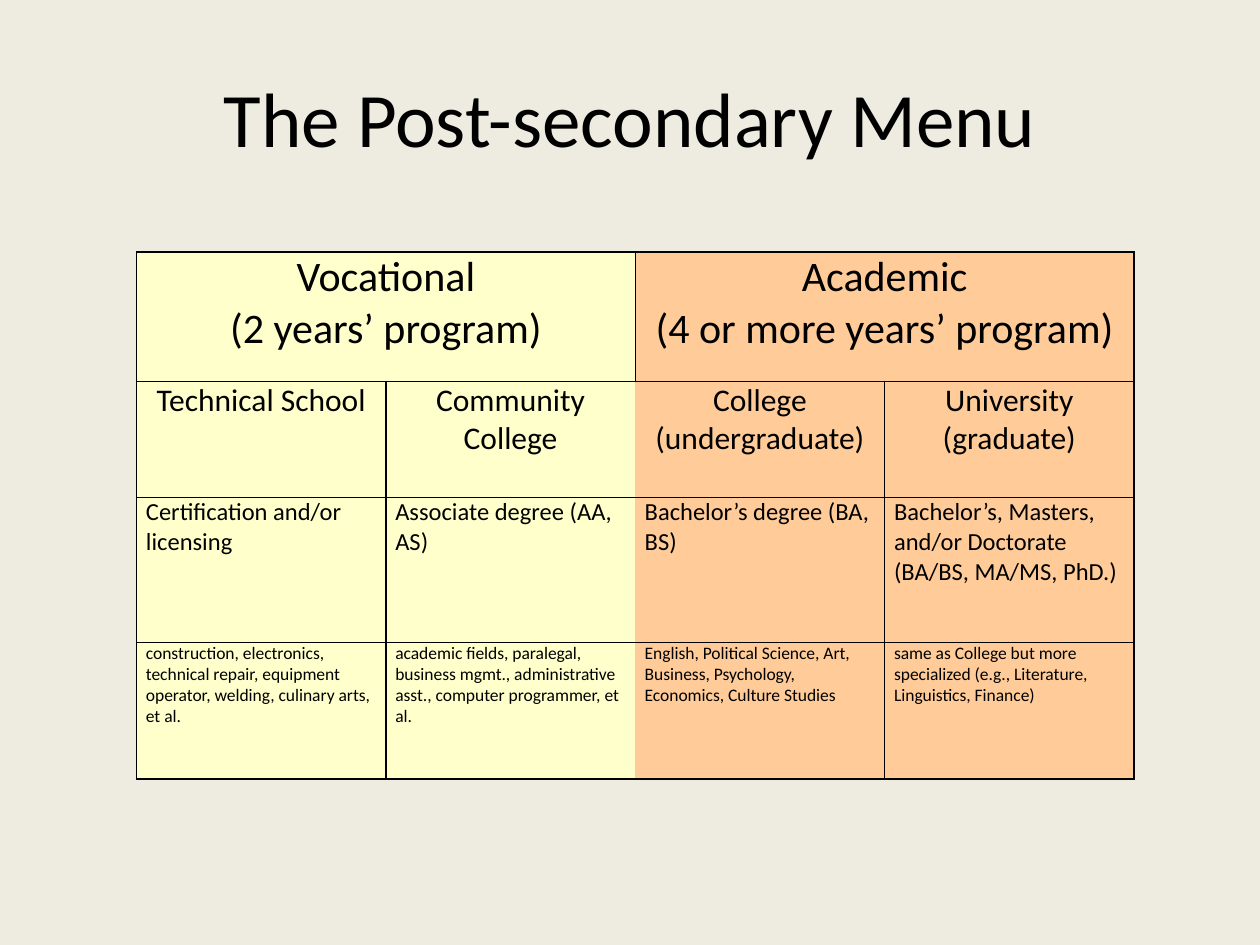
from lxml.etree import SubElement
from pptx import Presentation
from pptx.dml.color import RGBColor
from pptx.enum.text import MSO_ANCHOR, PP_ALIGN
from pptx.oxml import parse_xml
from pptx.oxml.ns import nsdecls, qn
from pptx.util import Pt

BACKGROUND = RGBColor(0xEE, 0xEC, 0xE1)
INK = RGBColor(0, 0, 0)
VOCATIONAL = RGBColor(0xFF, 0xFF, 0xCC)
ACADEMIC = RGBColor(0xFF, 0xCC, 0x99)

PROGRAMS = [
    ["Vocational\n(2 years’ program)", "", "Academic\n(4 or more years’ program)", ""],
    ["Technical School", "Community College", "College\n(undergraduate)",
     "University\n(graduate)"],
    ["Certification and/or licensing", "Associate degree (AA, AS)",
     "Bachelor’s degree (BA, BS)",
     "Bachelor’s, Masters, and/or Doctorate\n(BA/BS, MA/MS, PhD.)"],
    ["construction, electronics, technical repair, equipment operator, welding, "
     "culinary arts, et al.",
     "academic fields, paralegal, business mgmt., administrative asst., "
     "computer programmer, et al.",
     "English, Political Science, Art, Business, Psychology, Economics, Culture Studies",
     "same as College but more specialized (e.g., Literature, Linguistics, Finance)"],
]
ROW_HEIGHTS = [74, 66.3, 82.9, 77.9]
ROW_SIZES = [24, 18, 14, 10]


def write(frame, text, size, align=PP_ALIGN.LEFT, color=INK, font="Calibri"):
    """Fill a text frame with one paragraph per line of text."""
    frame.word_wrap = True
    frame.text = text
    for paragraph in frame.paragraphs:
        paragraph.alignment = align
        paragraph.font.size = Pt(size)
        paragraph.font.name = font
        paragraph.font.color.rgb = color


def draw_borders(cell, open_sides, width=1):
    """Rule the four sides of a cell, leaving the open sides bare."""
    properties = cell._tc.get_or_add_tcPr()
    for position, side in enumerate("LRTB"):
        border = parse_xml(f'<a:ln{side} {nsdecls("a")} w="{Pt(width)}"/>')
        if side in open_sides:
            SubElement(border, qn("a:noFill"))
        else:
            ink = SubElement(border, qn("a:solidFill"))
            SubElement(ink, qn("a:srgbClr"), val=str(INK))
        properties.insert(position, border)


def add_title(slide, text, left, top, width, height):
    """Place the slide title in its box."""
    title = slide.shapes.title
    title.left, title.top = Pt(left), Pt(top)
    title.width, title.height = Pt(width), Pt(height)
    title.text_frame.vertical_anchor = MSO_ANCHOR.MIDDLE
    write(title.text_frame, text, 44, align=PP_ALIGN.CENTER)


def add_menu(slide, left, top, width, height):
    """Place the table of programs, with a merged heading over each half."""
    menu = slide.shapes.add_table(
        len(PROGRAMS), 4, Pt(left), Pt(top), Pt(width), Pt(height)).table
    menu.first_row = menu.horz_banding = False
    for column in menu.columns:
        column.width = Pt(width / 4)
    for first in (0, 2):
        menu.cell(0, first).merge(menu.cell(0, first + 1))
    for row, (programs, row_height, size) in enumerate(
            zip(PROGRAMS, ROW_HEIGHTS, ROW_SIZES)):
        menu.rows[row].height = Pt(row_height)
        align = PP_ALIGN.CENTER if row < 2 else PP_ALIGN.LEFT
        for column, program in enumerate(programs):
            cell = menu.cell(row, column)
            cell.margin_left = cell.margin_right = Pt(5.4)
            cell.margin_top = cell.margin_bottom = 0
            cell.fill.solid()
            cell.fill.fore_color.rgb = VOCATIONAL if column < 2 else ACADEMIC
            draw_borders(cell, {1: "R", 2: "L"}.get(column, "") if row else "")
            write(cell.text_frame, program, size, align=align)


def main():
    """Build the slide and save it."""
    deck = Presentation()
    deck.slide_width, deck.slide_height = Pt(720), Pt(540)
    slide = deck.slides.add_slide(deck.slide_layouts[5])
    slide.background.fill.solid()
    slide.background.fill.fore_color.rgb = BACKGROUND
    add_title(slide, "The Post-secondary Menu", 36, 21.6, 648, 90)
    add_menu(slide, 78, 144, 570, sum(ROW_HEIGHTS))
    deck.save("out.pptx")


if __name__ == "__main__":
    main()
